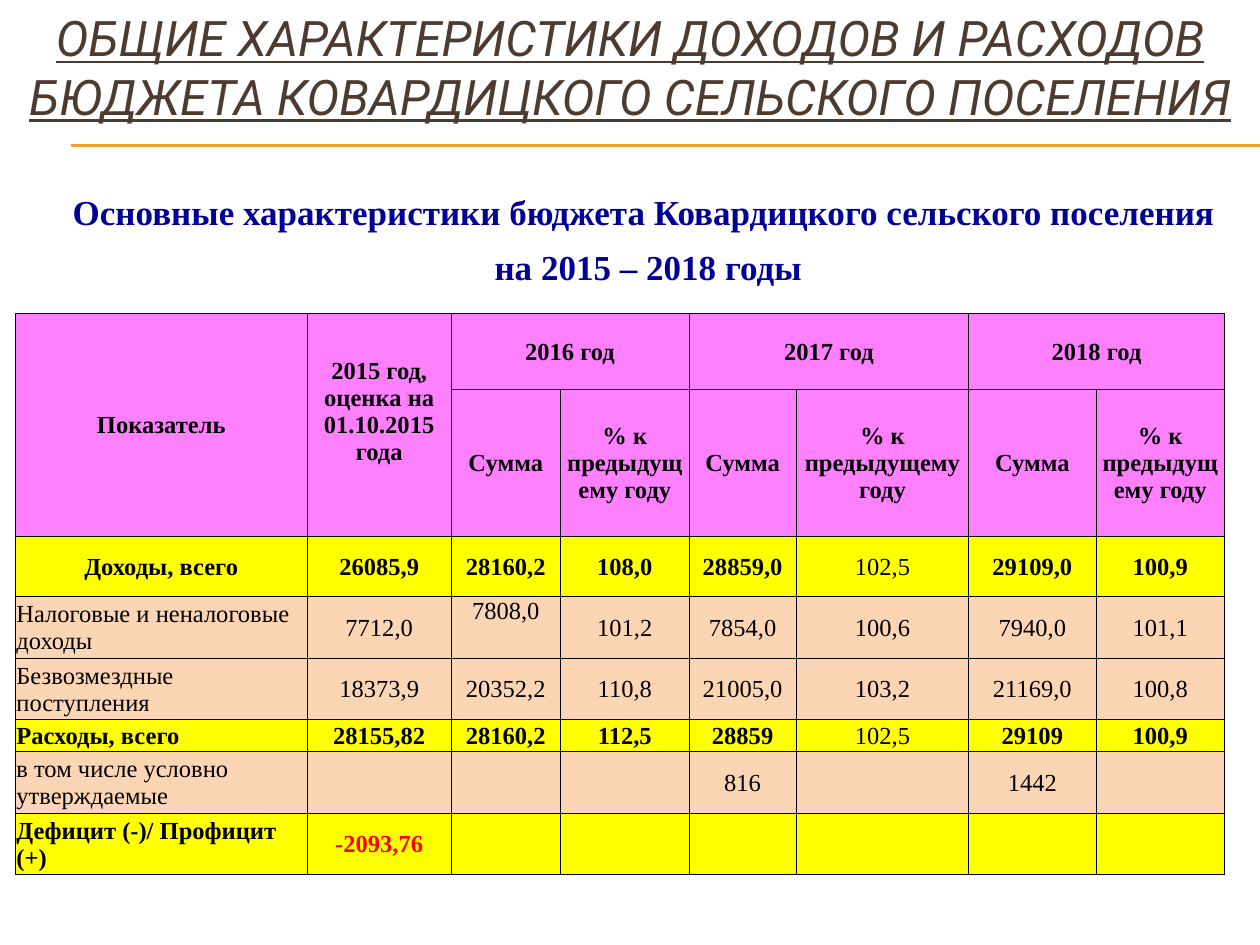
from dataclasses import dataclass

from lxml import etree
from pptx import Presentation
from pptx.dml.color import RGBColor
from pptx.enum.shapes import MSO_CONNECTOR
from pptx.enum.text import MSO_ANCHOR, PP_ALIGN
from pptx.oxml.ns import qn
from pptx.slide import Slide
from pptx.table import Table, _Cell
from pptx.text.text import TextFrame
from pptx.util import Inches, Pt

BLACK = RGBColor(0x00, 0x00, 0x00)
BROWN = RGBColor(0x4E, 0x3B, 0x30)
NAVY = RGBColor(0x00, 0x00, 0x99)
RED = RGBColor(0xFF, 0x00, 0x00)
GOLD = RGBColor(0xF0, 0xA2, 0x2E)
PINK = RGBColor(0xFF, 0x80, 0xFF)
YELLOW = RGBColor(0xFF, 0xFF, 0x00)
PEACH = RGBColor(0xFC, 0xD5, 0xB4)

LEFT, CENTER = PP_ALIGN.LEFT, PP_ALIGN.CENTER
TOP, MIDDLE = MSO_ANCHOR.TOP, MSO_ANCHOR.MIDDLE
STRAIGHT = MSO_CONNECTOR.STRAIGHT

SERIF = "Times New Roman"
GRID_COLUMNS, GRID_ROWS = 1000, 750
UNIT = Inches(10) // GRID_COLUMNS
COLUMN_WIDTHS = (232, 114, 87, 102, 85, 137, 101, 102)
ROW_HEIGHTS = (60, 82, 48, 49, 49, 25, 49, 49)
HEADER_ROWS = 2
PLAIN_COLUMN = 5


@dataclass(frozen=True)
class Area:
    column: int
    row: int
    columns: int
    rows: int

    def lengths(self) -> list[int]:
        return [n * UNIT for n in (self.column, self.row, self.columns, self.rows)]


@dataclass(frozen=True)
class BudgetRow:
    label: str
    values: tuple[str, ...]
    total: bool = False
    label_align: PP_ALIGN = LEFT


BUDGET = (
    BudgetRow(
        "Доходы, всего",
        ("26085,9", "28160,2", "108,0", "28859,0", "102,5", "29109,0", "100,9"),
        total=True,
        label_align=CENTER,
    ),
    BudgetRow(
        "Налоговые и неналоговые доходы",
        ("7712,0", "7808,0", "101,2", "7854,0", "100,6", "7940,0", "101,1"),
    ),
    BudgetRow(
        "Безвозмездные поступления",
        ("18373,9", "20352,2", "110,8", "21005,0", "103,2", "21169,0", "100,8"),
    ),
    BudgetRow(
        "Расходы, всего",
        ("28155,82", "28160,2", "112,5", "28859", "102,5", "29109", "100,9"),
        total=True,
    ),
    BudgetRow(
        "в том числе условно утверждаемые",
        ("", "", "", "816", "", "1442", ""),
    ),
    BudgetRow(
        "Дефицит (-)/ Профицит (+)",
        ("-2093,76", "", "", "", "", "", ""),
        total=True,
    ),
)


def write(frame: TextFrame, text: str, *, size: float = 14, font: str = SERIF,
          color: RGBColor = BLACK, bold: bool = False, italic: bool = False,
          underline: bool = False, align: PP_ALIGN = CENTER, before: float = 0,
          after: float = 0, margin: int = 0, indent: int = 0) -> None:
    frame.word_wrap = True
    frame.text = text
    for para in frame.paragraphs:
        para.alignment = align
        para.space_before, para.space_after = Pt(before), Pt(after)
        properties = para._p.get_or_add_pPr()
        properties.set("marL", str(margin * UNIT))
        properties.set("indent", str(indent * UNIT))
        for span in para.runs:
            span.font.name, span.font.size = font, Pt(size)
            span.font.bold, span.font.italic = bold, italic
            span.font.underline = underline
            span.font.color.rgb = color


def add_text_box(slide: Slide, area: Area) -> TextFrame:
    return slide.shapes.add_textbox(*area.lengths()).text_frame


def add_rule(slide: Slide, column: int, row: int) -> None:
    rule = slide.shapes.add_connector(
        STRAIGHT, column * UNIT, row * UNIT, GRID_COLUMNS * UNIT, row * UNIT)
    rule.line.color.rgb = GOLD
    rule.line.width = Pt(0.75)
    etree.SubElement(rule._element.spPr, qn("a:effectLst"))


def style_cell(cell: _Cell, color: RGBColor) -> None:
    properties = cell._tc.get_or_add_tcPr()
    for side in ("a:lnL", "a:lnR", "a:lnT", "a:lnB"):
        border = etree.SubElement(properties, qn(side), w=str(Pt(0.5)))
        fill = etree.SubElement(border, qn("a:solidFill"))
        etree.SubElement(fill, qn("a:srgbClr"), val=str(BLACK))
    cell.fill.solid()
    cell.fill.fore_color.rgb = color
    cell.vertical_anchor = MIDDLE
    cell.margin_left = cell.margin_right = cell.margin_top = UNIT
    cell.margin_bottom = 0


def fill_header(table: Table) -> None:
    for column, text in enumerate(("Показатель", "2015 год, оценка на 01.10.2015\vгода")):
        cell = table.cell(0, column)
        cell.merge(table.cell(1, column))
        write(cell.text_frame, text, bold=True)
    table.cell(0, 1).margin_bottom = 22 * UNIT
    for index, year in enumerate((2016, 2017, 2018)):
        column = 2 + 2 * index
        cell = table.cell(0, column)
        cell.merge(table.cell(0, column + 1))
        write(cell.text_frame, f"{year} год", bold=True)
        write(table.cell(1, column).text_frame, "Сумма", bold=True)
        write(table.cell(1, column + 1).text_frame, "% к предыдущему году", bold=True)


def fill_budget_row(table: Table, row: int, budget: BudgetRow) -> None:
    for column, text in enumerate((budget.label, *budget.values)):
        if text:
            write(
                table.cell(row, column).text_frame, text,
                bold=budget.total and column != PLAIN_COLUMN,
                color=RED if text.startswith("-") else BLACK,
                align=CENTER if column else budget.label_align,
            )


def add_budget_table(slide: Slide) -> None:
    area = Area(12, 249, sum(COLUMN_WIDTHS), sum(ROW_HEIGHTS))
    table = slide.shapes.add_table(
        len(ROW_HEIGHTS), len(COLUMN_WIDTHS), *area.lengths()).table
    table.first_row = table.horz_banding = False
    for column, width in zip(table.columns, COLUMN_WIDTHS):
        column.width = width * UNIT
    for row, height in zip(table.rows, ROW_HEIGHTS):
        row.height = height * UNIT
    colors = [PINK] * HEADER_ROWS + [YELLOW if row.total else PEACH for row in BUDGET]
    for row, color in zip(table.rows, colors):
        for cell in row.cells:
            style_cell(cell, color)
    fill_header(table)
    for row, budget in enumerate(BUDGET, start=HEADER_ROWS):
        fill_budget_row(table, row, budget)
    table.cell(3, 2).vertical_anchor = TOP


def main() -> None:
    deck = Presentation()
    deck.slide_width, deck.slide_height = GRID_COLUMNS * UNIT, GRID_ROWS * UNIT
    page = deck.slides.add_slide(deck.slide_layouts[6])
    for row in (115, 116):
        add_rule(page, 56, row)
    title = add_text_box(page, Area(0, 0, GRID_COLUMNS, 106))
    title.vertical_anchor = MIDDLE
    write(title, "ОБЩИЕ ХАРАКТЕРИСТИКИ ДОХОДОВ И РАСХОДОВ "
          "БЮДЖЕТА КОВАРДИЦКОГО СЕЛЬСКОГО ПОСЕЛЕНИЯ",
          size=28, font="Roboto", color=BROWN, italic=True, underline=True)
    subtitle = add_text_box(page, Area(12, 146, GRID_COLUMNS, 32))
    write(subtitle, "Основные характеристики бюджета Ковардицкого сельского поселения \n"
          "на 2015 – 2018 годы",
          size=20, color=NAVY, bold=True, before=4.6, after=3, margin=25, indent=-20)
    add_budget_table(page)
    deck.save("out.pptx")


if __name__ == "__main__":
    main()
